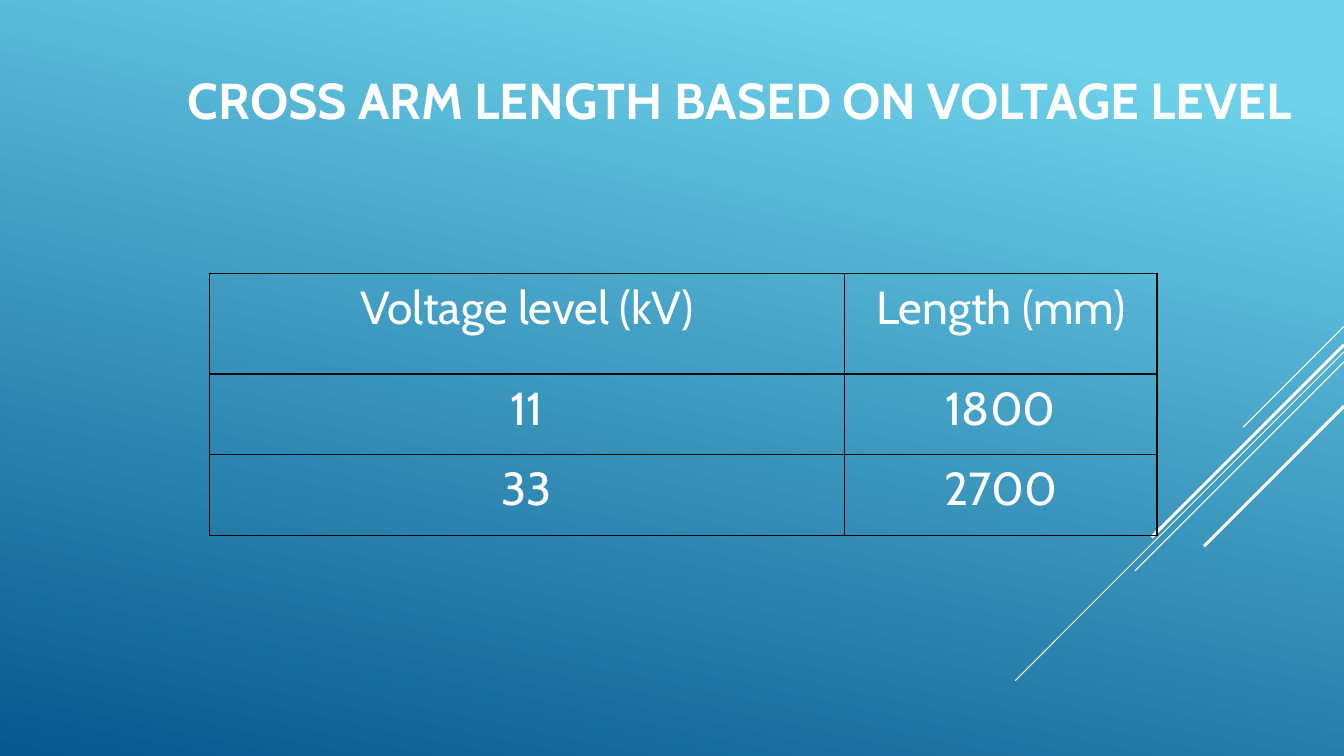
from typing import Any, NamedTuple

import pptx
import pptx.dml.color
import pptx.enum.shapes
import pptx.enum.text
import pptx.oxml
import pptx.oxml.ns
import pptx.util
from lxml import etree

Pt = pptx.util.Pt
RGBColor = pptx.dml.color.RGBColor
PP_ALIGN = pptx.enum.text.PP_ALIGN
ANCHOR = pptx.enum.text.MSO_ANCHOR

WHITE = RGBColor(0xFF, 0xFF, 0xFF)
BLACK = RGBColor(0x00, 0x00, 0x00)
SKY = RGBColor(0x6E, 0xD2, 0xEB)
NAVY = RGBColor(0x06, 0x58, 0x8E)

SLIDE_W, SLIDE_H = 960, 540
FONT = "Cabin"
TITLE = "CROSS ARM LENGTH BASED ON VOLTAGE LEVEL"
TITLE_FONT = {"name": FONT, "size": Pt(36), "bold": True}
CELL_FONT = {"name": FONT, "size": Pt(33), "bold": False}
CELL_FORMAT = {
    "margin_left": Pt(15),
    "margin_right": Pt(15),
    "margin_top": Pt(2),
    "margin_bottom": Pt(0),
    "vertical_anchor": ANCHOR.TOP,
}
COLUMN_WIDTHS = (453.6, 223.2)
ROW_HEIGHTS = (72, 57.6, 57.6)
ROWS = (
    ("Voltage level (kV)", "Length (mm)"),
    ("11", "1800"),
    ("33", "2700"),
)


class Streak(NamedTuple):
    """A 45-degree line running down and left from the slide's right edge."""
    top: float
    run: float
    weight: float


STREAKS = (
    Streak(233.2, 72, 0.75),
    Streak(251.3, 234.8, 0.75),
    Streak(258.5, 149.3, 0.75),
    Streak(246.3, 137.4, 2.25),
    Streak(290.2, 100, 2.25),
)


def apply(target: Any, values: dict[str, Any]) -> None:
    for name, value in values.items():
        setattr(target, name, value)


def write(p: Any, text: str, align: Any, font: dict[str, Any]) -> None:
    p.alignment = align
    r = p.add_run()
    r.text = text
    apply(r.font, font)
    r.font.color.rgb = WHITE


def paint_background(s: Any) -> None:
    fill = s.background.fill
    fill.gradient()
    fill.gradient_angle = 258
    for stop, position, color in zip(fill.gradient_stops, (0.1, 1), (SKY, NAVY)):
        stop.position = position
        stop.color.rgb = color


def add_streak(s: Any, streak: Streak) -> None:
    line = s.shapes.add_connector(
        pptx.enum.shapes.MSO_CONNECTOR.STRAIGHT,
        Pt(SLIDE_W), Pt(streak.top),
        Pt(SLIDE_W - streak.run), Pt(streak.top + streak.run),
    )
    line.line.color.rgb = WHITE
    line.line.width = Pt(streak.weight)
    etree.SubElement(line._element.spPr, pptx.oxml.ns.qn("a:effectLst"))


def add_borders(cell: Any) -> None:
    tc_pr = cell._tc.get_or_add_tcPr()
    for side in "LRTB":
        tc_pr.append(pptx.oxml.parse_xml(
            f'<a:ln{side} {pptx.oxml.ns.nsdecls("a")} w="{Pt(1)}">'
            f'<a:solidFill><a:srgbClr val="{BLACK}"/></a:solidFill></a:ln{side}>'
        ))


def add_title(s: Any) -> None:
    sp = s.shapes.title
    apply(sp, {"left": Pt(31), "top": Pt(34.6), "width": Pt(898.6), "height": Pt(72.7)})
    tf = sp.text_frame
    apply(tf, {
        "word_wrap": True,
        "vertical_anchor": ANCHOR.MIDDLE,
        "auto_size": pptx.enum.text.MSO_AUTO_SIZE.NONE,
    })
    write(tf.paragraphs[0], TITLE, PP_ALIGN.RIGHT, TITLE_FONT)


def add_length_table(s: Any) -> None:
    table = s.shapes.add_table(
        len(ROW_HEIGHTS), len(COLUMN_WIDTHS), Pt(149.6), Pt(195.1),
        Pt(sum(COLUMN_WIDTHS)), Pt(sum(ROW_HEIGHTS)),
    ).table
    apply(table, {"first_row": False, "horz_banding": False})
    for column, width in zip(table.columns, COLUMN_WIDTHS):
        column.width = Pt(width)
    for row, height, texts in zip(table.rows, ROW_HEIGHTS, ROWS):
        row.height = Pt(height)
        for cell, text in zip(row.cells, texts):
            apply(cell, CELL_FORMAT)
            add_borders(cell)
            cell.fill.background()
            p = cell.text_frame.paragraphs[0]
            p.line_spacing = 1.07
            write(p, text, PP_ALIGN.CENTER, CELL_FONT)


def main() -> None:
    prs = pptx.Presentation()
    apply(prs, {"slide_width": Pt(SLIDE_W), "slide_height": Pt(SLIDE_H)})
    s = prs.slides.add_slide(prs.slide_layouts.get_by_name("Title Only"))
    paint_background(s)
    for streak in STREAKS:
        add_streak(s, streak)
    add_title(s)
    add_length_table(s)
    prs.save("out.pptx")


if __name__ == "__main__":
    main()
